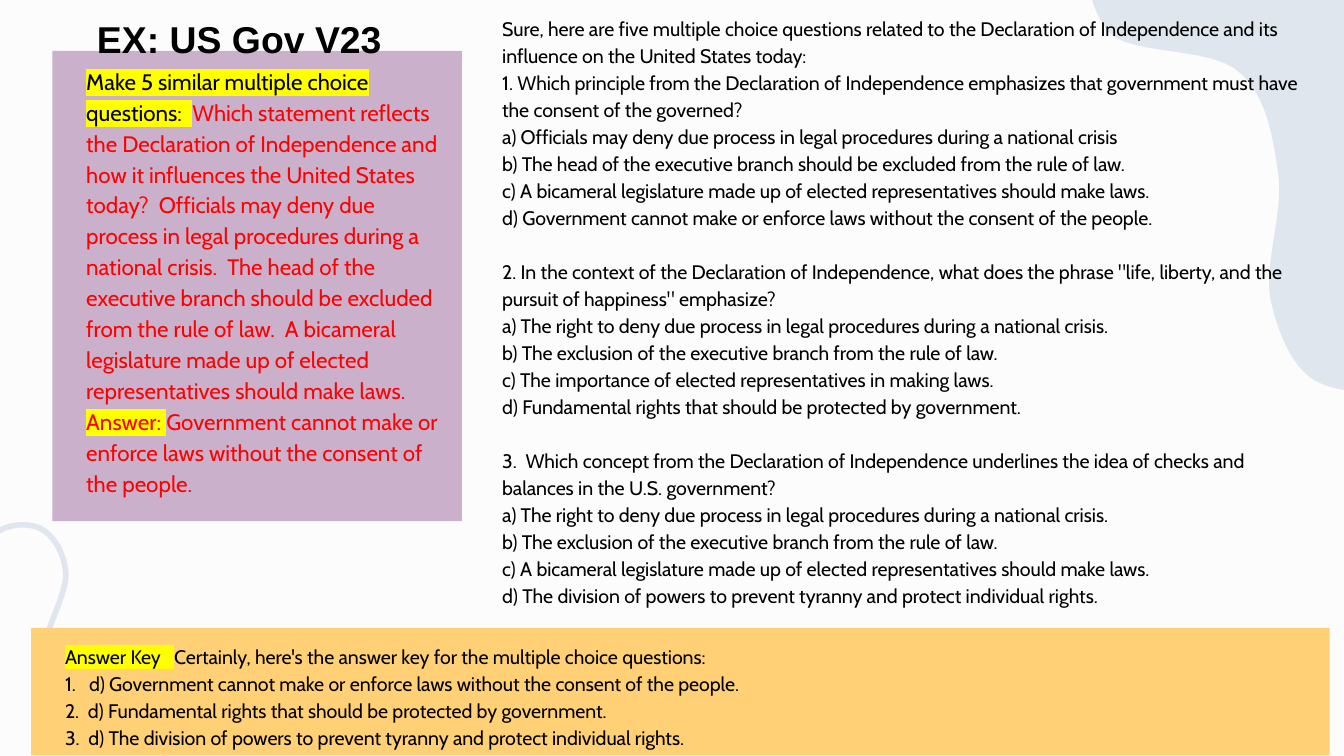
from lxml import etree
from pptx import Presentation
from pptx import util as u
from pptx.dml.color import RGBColor
from pptx.enum import shapes, text
from pptx.oxml.ns import qn

COLORS = {
    "background": "FDFCFD", "blob": "DFE6EE", "prompt": "CAB0CA", "key": "FFD075",
    "ink": "000000", "red": "FF0000", "marker": "FFFF00",
}

TITLE = "EX: US Gov V23"

PROMPT = [[
    ("Make 5 similar multiple choice questions:  ", "ink", True),
    ("Which statement reflects the Declaration of Independence and how it influences "
     "the United States today?  Officials may deny due process in legal procedures during "
     "a national crisis.  The head of the executive branch should be excluded from the rule "
     "of law.  A bicameral legislature made up of elected representatives should make laws.   ",
     "red", False),
    ("Answer: ", "red", True),
    ("Government cannot make or enforce laws without the consent of the people.", "red", False),
]]

QUESTION_GROUPS = [
    [
        "Sure, here are five multiple choice questions related to the Declaration of "
        "Independence and its influence on the United States today:",
        "1. Which principle from the Declaration of Independence emphasizes that government "
        "must have the consent of the governed?",
        "a) Officials may deny due process in legal procedures during a national crisis",
        "b) The head of the executive branch should be excluded from the rule of law.",
        "c) A bicameral legislature made up of elected representatives should make laws.",
        "d) Government cannot make or enforce laws without the consent of the people.",
    ],
    [
        "2. In the context of the Declaration of Independence, what does the phrase "
        '"life, liberty, and the pursuit of happiness" emphasize?',
        "a) The right to deny due process in legal procedures during a national crisis.",
        "b) The exclusion of the executive branch from the rule of law.",
        "c) The importance of elected representatives in making laws.",
        "d) Fundamental rights that should be protected by government.",
    ],
    [
        "3.  Which concept from the Declaration of Independence underlines the idea of "
        "checks and balances in the U.S. government?",
        "a) The right to deny due process in legal procedures during a national crisis.",
        "b) The exclusion of the executive branch from the rule of law.",
        "c) A bicameral legislature made up of elected representatives should make laws.",
        "d) The division of powers to prevent tyranny and protect individual rights.",
    ],
]

KEY = [
    [("Answer Key   ", "ink", True),
     ("Certainly, here's the answer key for the multiple choice questions:", "ink", False)],
    [("1.   d) Government cannot make or enforce laws without the consent of the people.",
      "ink", False)],
    [("2.  d) Fundamental rights that should be protected by government.", "ink", False)],
    [("3.  d) The division of powers to prevent tyranny and protect individual rights.",
      "ink", False)],
]

BOXES = {
    "title": (0.98, -0.08, 7.09, 1.93),
    "prompt": (0.99, 0.96, 7.74, 8.89),
    "questions": (8.85, 0, 15.95, 13.41),
    "key": (0.59, 11.87, 24.54, 2.41),
}

LOOP = [(-0.26, 3.9, 1.5, 1.88), (0.46, 5.78), [
    (0.68, 5.79, 1.01, 5.81, 1.13, 5.75), (1.26, 5.68, 1.24, 5.54, 1.21, 5.41),
    (1.18, 5.28, 1.08, 5.04, 0.93, 4.97), (0.78, 4.9, 0.4, 5.09, 0.32, 4.97),
    (0.25, 4.85, 0.5, 4.44, 0.49, 4.27), (0.48, 4.09, 0.37, 3.95, 0.27, 3.92),
    (0.17, 3.89, -0.04, 3.89, -0.12, 4.09), (-0.21, 4.29, -0.25, 4.84, -0.26, 5.11),
    (-0.27, 5.38, -0.29, 5.59, -0.17, 5.7), (-0.05, 5.81, 0.24, 5.77, 0.46, 5.78),
]]
CORNER = [(8.1, -0.62, 2.85, 3.54), (8.3, -0.5), [
    (7.98, -0.36, 8.1, 0.06, 8.25, 0.24), (8.41, 0.41, 9, 0.35, 9.21, 0.53),
    (9.42, 0.7, 9.47, 1.01, 9.51, 1.29), (9.55, 1.57, 9.41, 1.95, 9.45, 2.21),
    (9.5, 2.46, 9.61, 2.73, 9.78, 2.83), (9.95, 2.93, 10.31, 2.96, 10.48, 2.8),
    (10.66, 2.64, 10.77, 2.34, 10.84, 1.86), (10.91, 1.38, 11.01, 0.32, 10.9, -0.09),
    (10.79, -0.49, 10.61, -0.51, 10.18, -0.58), (9.75, -0.65, 8.62, -0.63, 8.3, -0.5),
]]
CM_PER_INCH = 2.54


def rgb(name):
    return RGBColor.from_string(COLORS[name])


def fill(sp, color):
    sp.fill.solid()
    sp.fill.fore_color.rgb = rgb(color)


def emu(inches):
    return u.Cm(inches * CM_PER_INCH)


def add_blob(s, box, start, curves):
    left, top, width, height = map(emu, box)
    builder = s.shapes.build_freeform(emu(start[0]), emu(start[1]))
    builder.add_line_segments([(emu(c[4]), emu(c[5])) for c in curves], close=True)
    sp = builder.convert_to_shape()
    sp.left, sp.top, sp.width, sp.height = left, top, width, height
    sp.shadow.inherit = False

    outline = next(sp._element.iter(qn("a:path")))
    outline.set("w", str(width))
    outline.set("h", str(height))
    for child in list(outline):
        outline.remove(child)

    def command(tag, coords):
        node = etree.SubElement(outline, qn(tag))
        for x, y in zip(coords[::2], coords[1::2]):
            etree.SubElement(node, qn("a:pt"), x=str(emu(x) - left), y=str(emu(y) - top))

    command("a:moveTo", start)
    for curve in curves:
        command("a:cubicBezTo", curve)
    command("a:close", ())
    return sp


def place(s, sp, box):
    sp.left, sp.top, sp.width, sp.height = map(u.Cm, BOXES[box])
    s.shapes._spTree.append(sp._element)


def write(sp, paragraphs, size, font="Cabin", bold=False, indent=0.39,
          align=text.PP_ALIGN.LEFT, gaps=()):
    tf = sp.text_frame
    tf.word_wrap = True
    tf.auto_size = text.MSO_AUTO_SIZE.NONE
    tf.vertical_anchor = text.MSO_ANCHOR.TOP
    tf.margin_left = tf.margin_right = tf.margin_top = tf.margin_bottom = u.Cm(0.25)
    for i, runs in enumerate(paragraphs):
        p = tf.paragraphs[0] if i == 0 else tf.add_paragraph()
        p.alignment = align
        p.line_spacing = 1.15
        p.space_before = u.Pt(14.5 if i in gaps else 0)
        p.space_after = u.Pt(0)
        pPr = p._p.get_or_add_pPr()
        pPr.set("marL", str(u.Cm(indent)))
        pPr.set("indent", "0")
        etree.SubElement(pPr, qn("a:buNone"))
        for words, color, marked in runs:
            r = p.add_run()
            r.text = words
            r.font.size = u.Pt(size)
            r.font.bold = bold
            r.font.name = font
            r.font.color.rgb = rgb(color)
            if marked:
                highlight = etree.Element(qn("a:highlight"))
                etree.SubElement(highlight, qn("a:srgbClr"), val=COLORS["marker"])
                r.font._element.find(qn("a:solidFill")).addnext(highlight)


def main():
    prs = Presentation()
    prs.slide_width, prs.slide_height = u.Cm(25.4), u.Cm(14.29)
    s = prs.slides.add_slide(prs.slide_layouts.get_by_name("Two Content"))
    fill(s.background, "background")

    loop = add_blob(s, *LOOP)
    loop.fill.background()
    loop.line.color.rgb = rgb("blob")
    loop.line.width = u.Pt(3)
    corner = add_blob(s, *CORNER)
    fill(corner, "blob")
    corner.line.fill.background()

    title, prompt, questions = s.placeholders
    lines = [[(line, "ink", False)] for group in QUESTION_GROUPS for line in group]
    gaps = [sum(map(len, QUESTION_GROUPS[:n])) for n in range(1, len(QUESTION_GROUPS))]
    place(s, questions, "questions")
    write(questions, lines, 10.5, gaps=gaps)

    place(s, prompt, "prompt")
    fill(prompt, "prompt")
    write(prompt, PROMPT, 12)

    place(s, title, "title")
    write(title, [[(TITLE, "ink", False)]], 20, font="Arial", bold=True, indent=0,
          align=text.PP_ALIGN.CENTER)

    key = s.shapes.add_shape(shapes.MSO_SHAPE.RECTANGLE, *map(u.Cm, BOXES["key"]))
    key.shadow.inherit = False
    fill(key, "key")
    key.line.fill.background()
    write(key, KEY, 10.5)

    prs.save("out.pptx")


if __name__ == "__main__":
    main()
